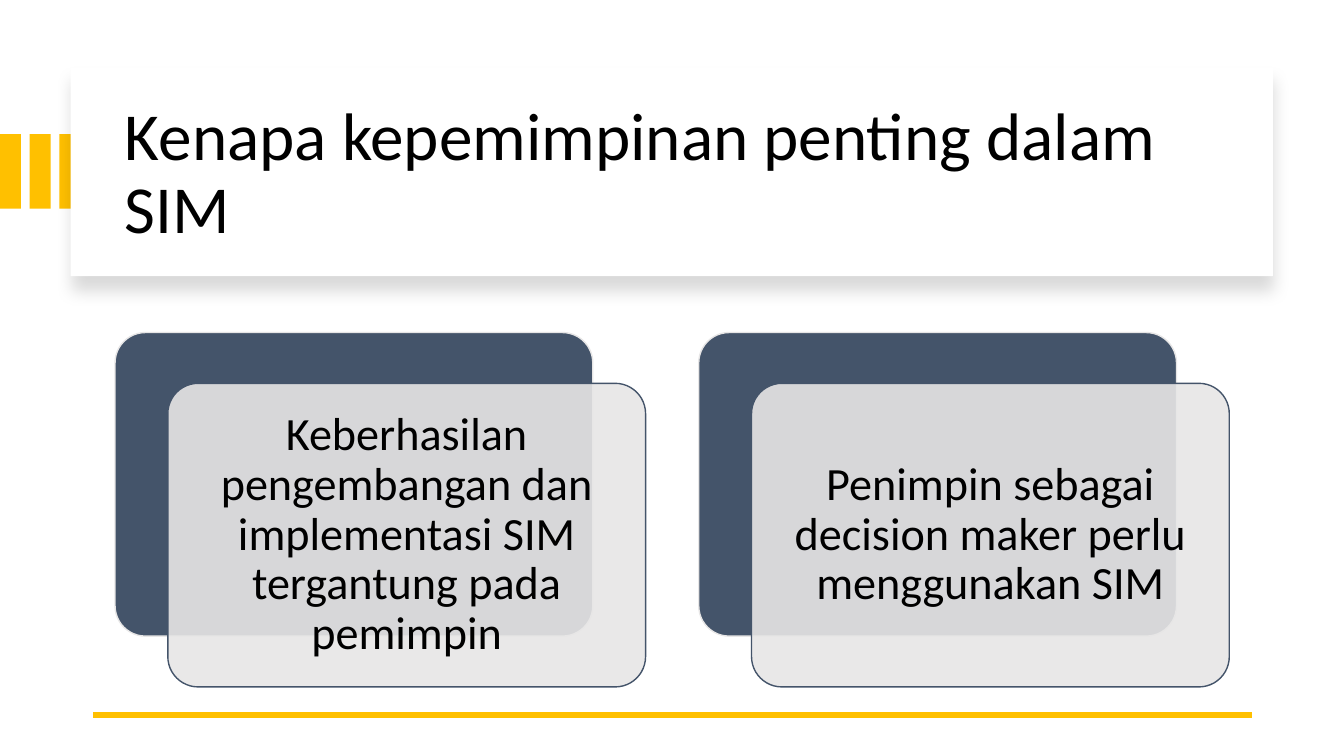
from lxml import etree
from pptx import Presentation
from pptx.dml.color import RGBColor
from pptx.enum.shapes import MSO_CONNECTOR, MSO_SHAPE
from pptx.enum.text import MSO_ANCHOR, PP_ALIGN
from pptx.oxml import parse_xml
from pptx.oxml.ns import nsdecls, qn
from pptx.util import Cm, Pt

TITLE = "Kenapa kepemimpinan penting dalam SIM"
CARDS = [
    "Keberhasilan pengembangan dan implementasi SIM tergantung pada pemimpin",
    "Penimpin sebagai decision maker perlu menggunakan SIM",
]
COLORS = {
    "gold": "FFC000",
    "navy": "44546A",
    "gray": "E7E6E6",
    "white": "FFFFFF",
    "black": "000000",
}
FONT = "Calibri"

BAR_COUNT, BAR_PITCH = 3, 0.75
BAR_TOP, BAR_W, BAR_H = 3.38, 0.53, 1.88
PANEL = (1.78, 1.7, 30.3, 5.26)
TITLE_BOX = (2.9, 2.26, 28.27, 4.32)
RULE_LEFT, RULE_RIGHT, RULE_Y = 2.34, 31.55, 18.01
CARD_LEFT, CARD_TOP, CARD_PITCH = 2.9, 8.38, 14.71
CARD_W, CARD_H = 12.04, 7.65
SHIFT_X, SHIFT_Y = 1.33, 1.28
TEXT_INSET = 0.23


def color(name):
    return RGBColor.from_string(COLORS[name])


def add_box(s, kind, box, fill, line=None, alpha=None):
    sp = s.shapes.add_shape(kind, *map(Cm, box))
    sp.shadow.inherit = False
    sp.fill.solid()
    sp.fill.fore_color.rgb = color(fill)
    if alpha:
        clr = sp._element.spPr.find(qn("a:solidFill"))[0]
        etree.SubElement(clr, qn("a:alpha")).set("val", str(alpha * 1000))
    if line:
        sp.line.color.rgb = color(line)
        sp.line.width = Pt(1)
    else:
        sp.line.fill.background()
    if kind == MSO_SHAPE.ROUNDED_RECTANGLE:
        sp.adjustments[0] = 0.1
    return sp


def add_text(s, text, box, size, align=PP_ALIGN.LEFT, inset=None):
    tf = s.shapes.add_textbox(*map(Cm, box)).text_frame
    tf.word_wrap = True
    tf.vertical_anchor = MSO_ANCHOR.MIDDLE
    if inset:
        tf.margin_left = tf.margin_right = Cm(inset)
        tf.margin_top = tf.margin_bottom = Cm(inset)
    p = tf.paragraphs[0]
    p.alignment = align
    p.line_spacing = 0.9
    r = p.add_run()
    r.text = text
    r.font.name = FONT
    r.font.size = Pt(size)
    r.font.color.rgb = color("black")


def add_shadow(sp):
    effects = sp._element.spPr.find(qn("a:effectLst"))
    effects.append(parse_xml(
        f'<a:outerShdw {nsdecls("a")} blurRad="{Pt(11)}" dist="{Pt(10)}" '
        'dir="5400000" algn="t" rotWithShape="0">'
        f'<a:srgbClr val="{COLORS["black"]}"><a:alpha val="15000"/></a:srgbClr>'
        '</a:outerShdw>'))


def add_rule(s):
    y = Cm(RULE_Y)
    rule = s.shapes.add_connector(
        MSO_CONNECTOR.STRAIGHT, Cm(RULE_RIGHT), y, Cm(RULE_LEFT), y)
    rule.line.color.rgb = color("gold")
    rule.line.width = Pt(4.5)
    etree.SubElement(rule._element.spPr, qn("a:effectLst"))


def add_card(s, text, left):
    x, y = left + SHIFT_X, CARD_TOP + SHIFT_Y
    rounded = MSO_SHAPE.ROUNDED_RECTANGLE
    add_box(s, rounded, (left, CARD_TOP, CARD_W, CARD_H), "navy", "gray")
    add_box(s, rounded, (x, y, CARD_W, CARD_H), "gray", "navy", alpha=90)
    box = (x + TEXT_INSET, y + TEXT_INSET,
           CARD_W - 2 * TEXT_INSET, CARD_H - 2 * TEXT_INSET)
    add_text(s, text, box, 33, align=PP_ALIGN.CENTER, inset=0.35)


def main():
    prs = Presentation()
    prs.slide_width, prs.slide_height = Cm(33.87), Cm(19.05)
    s = prs.slides.add_slide(prs.slide_layouts[6])
    for i in range(BAR_COUNT):
        add_box(s, MSO_SHAPE.RECTANGLE,
                (i * BAR_PITCH, BAR_TOP, BAR_W, BAR_H), "gold")
    add_shadow(add_box(s, MSO_SHAPE.RECTANGLE, PANEL, "white"))
    add_text(s, TITLE, TITLE_BOX, 48)
    add_rule(s)
    for i, text in enumerate(CARDS):
        add_card(s, text, CARD_LEFT + i * CARD_PITCH)
    prs.save("out.pptx")


if __name__ == "__main__":
    main()
